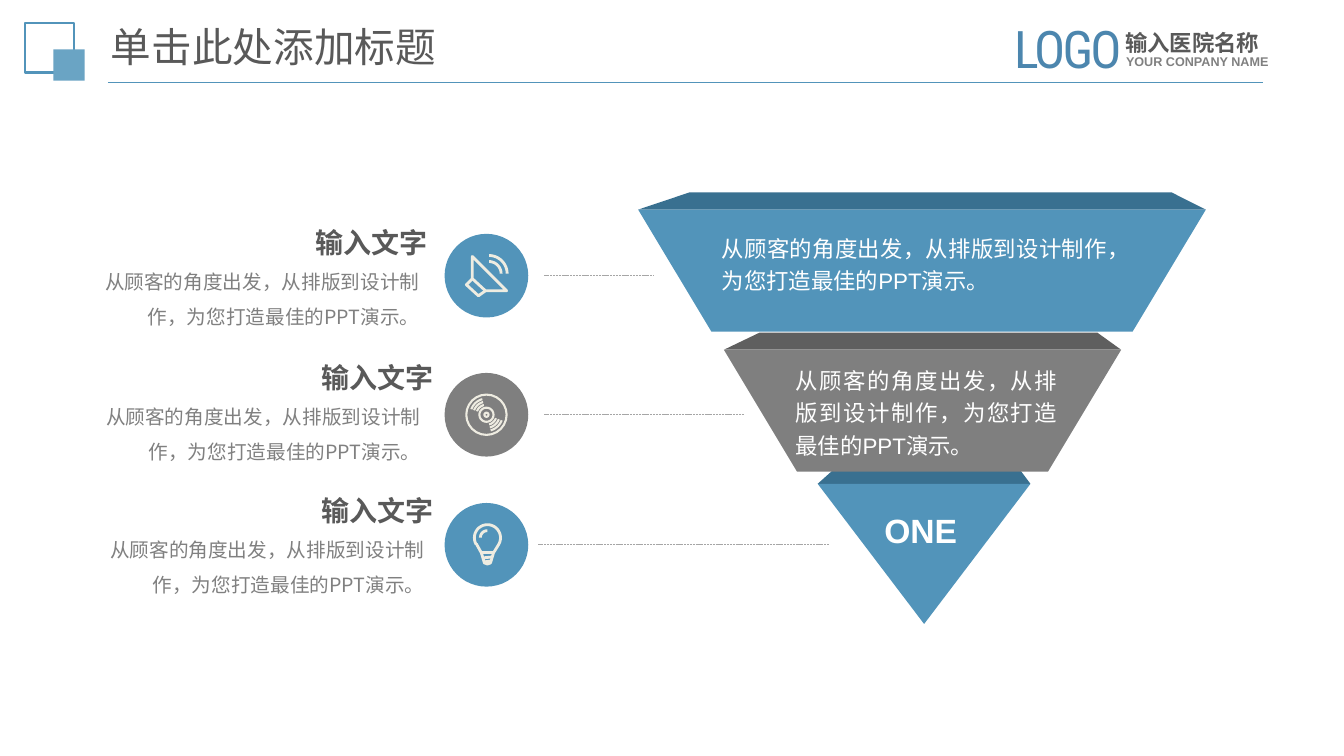
import math
from pptx import Presentation
from pptx import util as u
from pptx.dml.color import RGBColor
from pptx.enum import dml, shapes, text
from pptx.oxml import ns
from lxml import etree

WIDTH, HEIGHT = 13.33, 7.5
BLUE, DARK_BLUE, GREY, DARK_GREY = "5294BA", "397090", "7F7F7F", "5F5F5F"
INK, SOFT, CREAM, WHITE = "595959", "808080", "EEECE1", "FFFFFF"
CJK = "Noto Sans CJK SC"
SLOGAN = "从顾客的角度出发，从排版到设计制作，为您打造最佳的PPT演示。"
LEFT, RIGHT, JUSTIFY = (text.PP_ALIGN.LEFT, text.PP_ALIGN.RIGHT,
                        text.PP_ALIGN.JUSTIFY)


def paint(color_format, hex_code):
    color_format.rgb = RGBColor.from_string(hex_code)


def style(part, fill=None, line=None, weight=1.0):
    part.shadow.inherit = False
    if fill:
        part.fill.solid()
        paint(part.fill.fore_color, fill)
    else:
        part.fill.background()
    if line:
        paint(part.line.color, line)
        part.line.width = u.Pt(weight)
    else:
        part.line.fill.background()
    return part


def preset(slide, kind, box, **look):
    return style(slide.shapes.add_shape(kind, *map(u.Inches, box)), **look)


def outline(slide, points, close=True, **look):
    corners = [(u.Inches(x), u.Inches(y)) for x, y in points]
    builder = slide.shapes.build_freeform(*corners[0])
    builder.add_line_segments(corners[1:], close=close)
    return style(builder.convert_to_shape(), **look)


def rule(slide, start, end, color, weight, dash=None):
    line = slide.shapes.add_connector(
        shapes.MSO_CONNECTOR.STRAIGHT, *map(u.Inches, start + end))
    paint(line.line.color, color)
    line.line.width = u.Pt(weight)
    if dash:
        line.line.dash_style = dash
    etree.SubElement(line._element.spPr, ns.qn("a:effectLst"))


def write(target, words, size, color, font="Arial", bold=False, align=LEFT,
          spacing=None, inset=(0.1, 0.05), wrap=True, tracking=None,
          anchor=text.MSO_ANCHOR.TOP):
    frame = target.text_frame
    frame.word_wrap = wrap
    frame.auto_size = text.MSO_AUTO_SIZE.NONE
    frame.vertical_anchor = anchor
    frame.margin_left = frame.margin_right = u.Inches(inset[0])
    frame.margin_top = frame.margin_bottom = u.Inches(inset[1])
    line = frame.paragraphs[0]
    line.alignment = align
    if spacing:
        line.line_spacing = spacing
    run = line.add_run()
    run.text = words
    run.font.size, run.font.bold, run.font.name = u.Pt(size), bold, font
    paint(run.font.color, color)
    properties = run.font._element
    etree.SubElement(properties, ns.qn("a:ea")).set("typeface", CJK)
    if tracking:
        properties.set("spc", str(tracking))


def label(slide, box, words, size, color, **form):
    write(slide.shapes.add_textbox(*map(u.Inches, box)), words, size, color,
          **form)


def header(slide, box):
    left, top, width, height = box
    # Title and its rule
    title = slide.shapes.title
    title.left, title.top, title.width, title.height = map(
        u.Inches, (left + 0.75, top + 0.02, 8.6, 0.48))
    write(title, "单击此处添加标题", 29, INK, font=CJK, spacing=0.9,
          anchor=text.MSO_ANCHOR.MIDDLE)
    base = top + height
    rule(slide, (left + 0.82, base), (left + width, base), BLUE, 1.25)
    # Overlapping squares
    square = shapes.MSO_SHAPE.RECTANGLE
    preset(slide, square, (left, top, 0.48, 0.49), line=BLUE, weight=1.5)
    preset(slide, square, (left + 0.28, top + 0.26, 0.31, 0.31), fill="6AA4C4")
    # Hospital name
    right = left + width
    label(slide, (right - 1.47, top + 0.01, 1.75, 0.37), "输入医院名称", 16, INK,
          font="Calibri", bold=True)
    label(slide, (right - 1.46, top + 0.26, 1.93, 0.25), "YOUR CONPANY NAME",
          9, SOFT, bold=True)
    label(slide, (right - 2.57, top - 0.11, 1.41, 0.72), "LOGO", 37, "4C86AE",
          font="Roboto Condensed", tracking=-200)


def arc(radius, start, end, x=0.0, y=0.0):
    steps = 24
    angles = [math.radians(start + (end - start) * i / steps)
              for i in range(steps + 1)]
    return [(x + radius * math.cos(a), y + radius * math.sin(a))
            for a in angles]


# Icon strokes are measured from the middle of their circle
DISH = [
    [(-0.14, -0.19), (0.2, 0.15), (-0.01, 0.15), (-0.14, 0.03), (-0.14, -0.19)],
    [(-0.14, 0.03), (-0.2, 0.09), (-0.08, 0.2), (-0.01, 0.15)],
    arc(0.12, -90, 0, 0.025, -0.02), arc(0.18, -90, 0, 0.025, -0.02),
]
DISC = [arc(radius, 0, 360) for radius in (0.2, 0.07, 0.02)] + [
    arc(radius, turn + 20, turn + 75)
    for radius in (0.1, 0.13, 0.16) for turn in (0, 180)]
BULB = [
    arc(0.13, 150, 390, 0.01, -0.07)
    + [(0.07, 0.08), (0.04, 0.18), (0.01, 0.19), (-0.02, 0.18), (-0.05, 0.08),
       (-0.1, -0.01)],
    arc(0.07, 180, 270, 0.01, -0.07),
    [(-0.05, 0.08), (0.07, 0.08)], [(-0.04, 0.13), (0.06, 0.12)],
    [(-0.03, 0.17), (0.05, 0.16)],
]


def topic(slide, box, icon, color, weight, heading, body_left, leader):
    """Heading and text on the left, icon circle, leader to the funnel."""
    left, top, diameter, _ = box
    x, y = left + diameter / 2, top + diameter / 2
    rule(slide, (leader[0], y), (leader[1], y), "A6A6A6", 0.5,
         dml.MSO_LINE.SQUARE_DOT)
    preset(slide, shapes.MSO_SHAPE.OVAL, box, fill=color)
    for stroke in icon:
        outline(slide, [(x + dx, y + dy) for dx, dy in stroke], close=False,
                line=CREAM, weight=weight)
    heading_left, heading_top = heading
    label(slide, (heading_left, heading_top, 1.12, 0.37), "输入文字", 20, INK,
          bold=True, align=RIGHT, spacing=1.2, inset=(0, 0), wrap=False)
    label(slide, (body_left, heading_top + 0.34, 3.42, 1.16), SLOGAN, 14, SOFT,
          font=CJK, align=RIGHT, spacing=1.5)


def tier(slide, box, color, lid_color, words, words_box, size=16, tip=False):
    """One funnel level: dark lid, front face and its words."""
    left, top, width, height = box
    right, bottom, slope = left + width, top + height, 0.6 * height
    lid_top = top - 0.17
    outline(slide, [(left + 0.09 * width, lid_top),
                    (right - 0.06 * width, lid_top), (right, top), (left, top)],
            fill=lid_color)
    if tip:
        face = preset(slide, shapes.MSO_SHAPE.ISOSCELES_TRIANGLE, box,
                      fill=color)
        face.rotation = 180
    else:
        outline(slide, [(left, top), (right, top), (right - slope, bottom),
                        (left + slope, bottom)], fill=color)
    dx, dy, words_width, words_height = words_box
    label(slide, (left + dx, top + dy, words_width, words_height), words, size,
          WHITE, bold=tip, align=JUSTIFY, spacing=1.2, inset=(0, 0))


def main():
    deck = Presentation()
    deck.slide_width, deck.slide_height = u.Inches(WIDTH), u.Inches(HEIGHT)
    slide = deck.slides.add_slide(deck.slide_layouts[5])
    header(slide, (0.25, 0.23, 12.28, 0.59))

    # Funnel, lowest level first so that upper levels overlap it
    tier(slide, (8.11, 4.8, 2.11, 1.39), BLUE, DARK_BLUE, "ONE",
         (0.66, 0.18, 0.99, 0.48), size=24, tip=True)
    tier(slide, (7.18, 3.47, 3.94, 1.21), GREY, DARK_GREY, SLOGAN,
         (0.71, 0.12, 2.6, 0.97))
    tier(slide, (6.33, 2.08, 5.63, 1.21), BLUE, DARK_BLUE, SLOGAN,
         (0.83, 0.2, 4.05, 0.62))

    # Topics: circle top, icon, colour, stroke, heading, text left, leader
    for top, *details in (
            (2.32, DISH, BLUE, 2, (3.12, 2.17), 0.84, (5.4, 6.49)),
            (3.7, DISC, GREY, 1.5, (3.18, 3.51), 0.85, (5.4, 7.38)),
            (4.99, BULB, BLUE, 2, (3.18, 4.83), 0.89, (5.34, 8.22))):
        topic(slide, (4.41, top, 0.83, 0.83), *details)
    deck.save("out.pptx")


if __name__ == "__main__":
    main()
